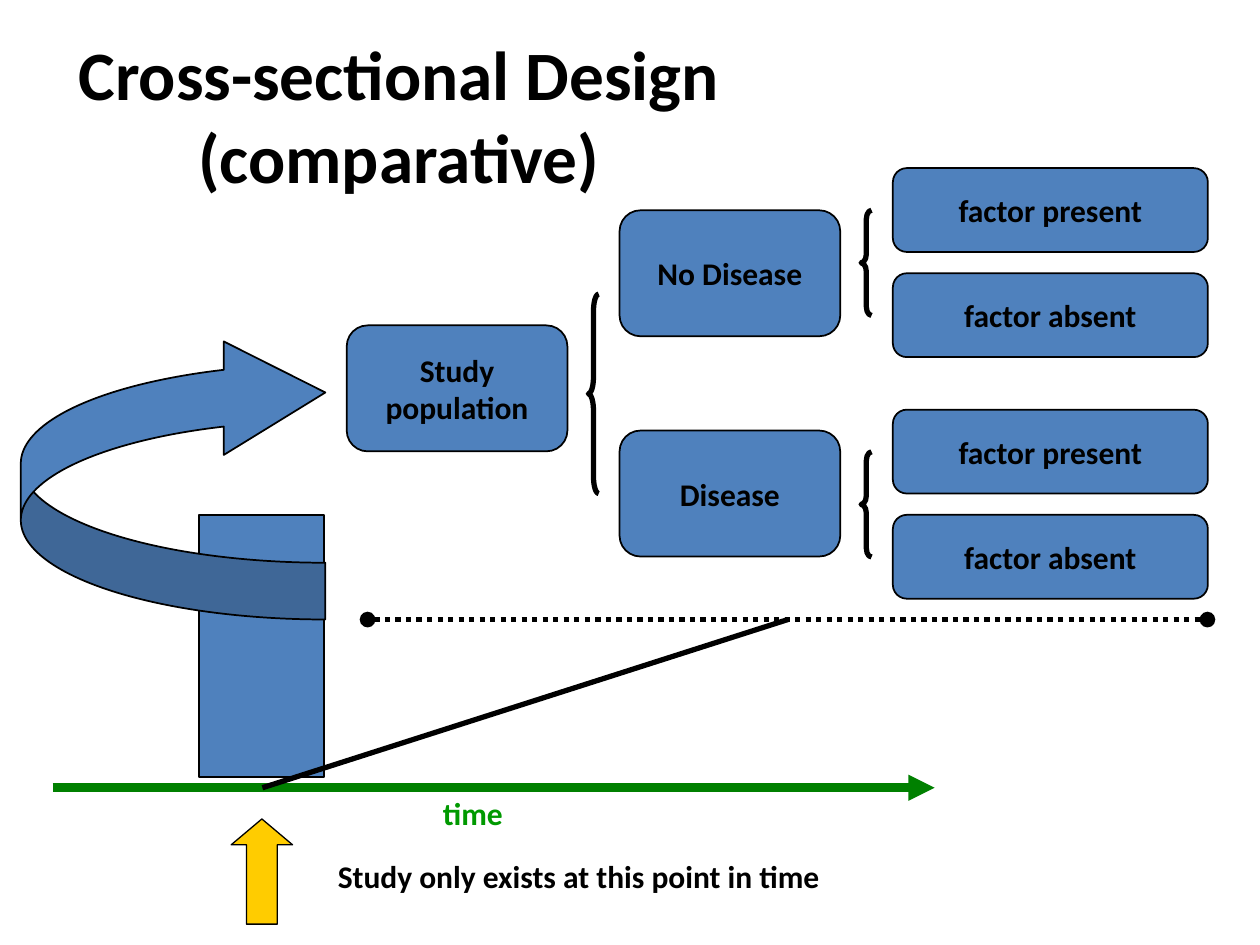
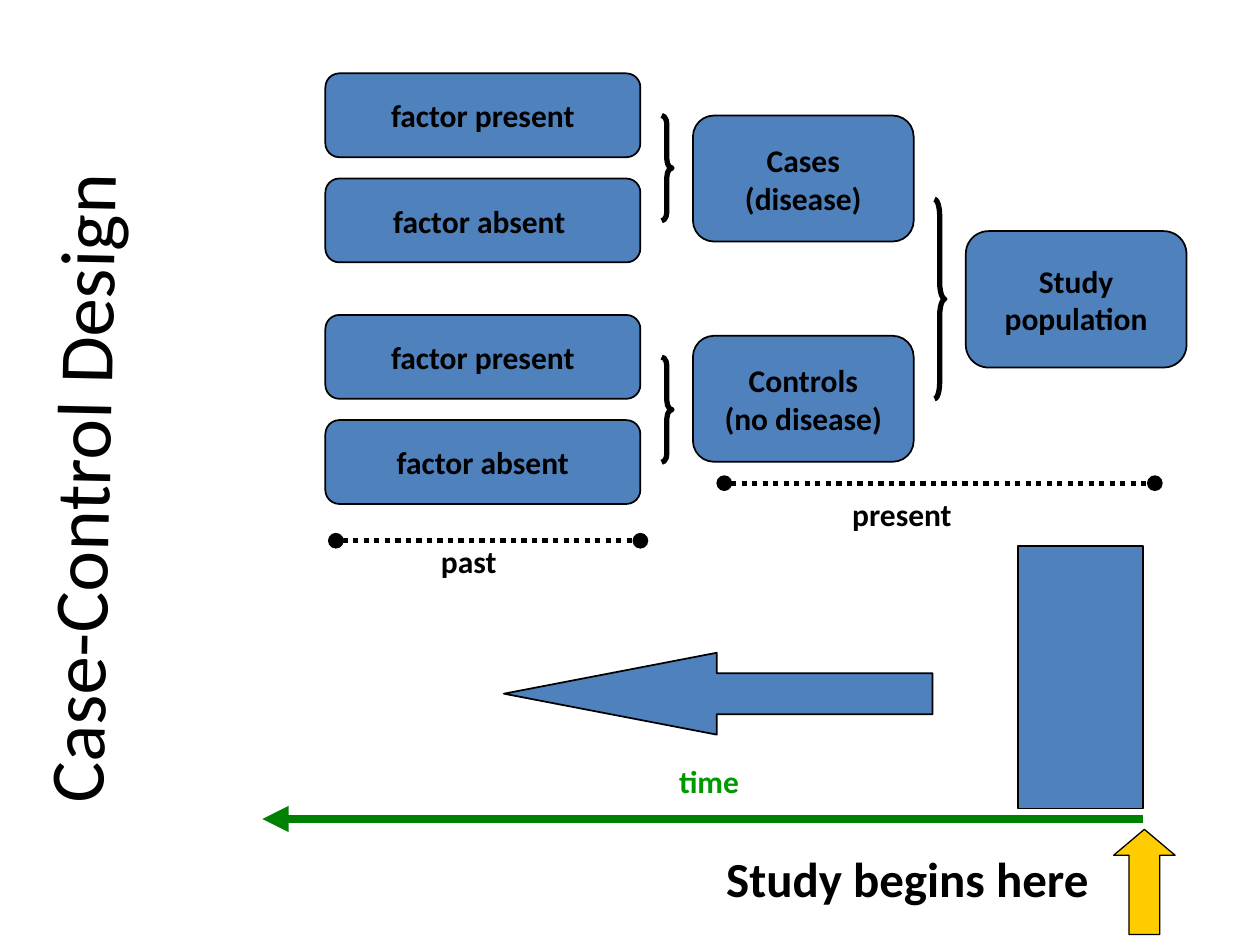
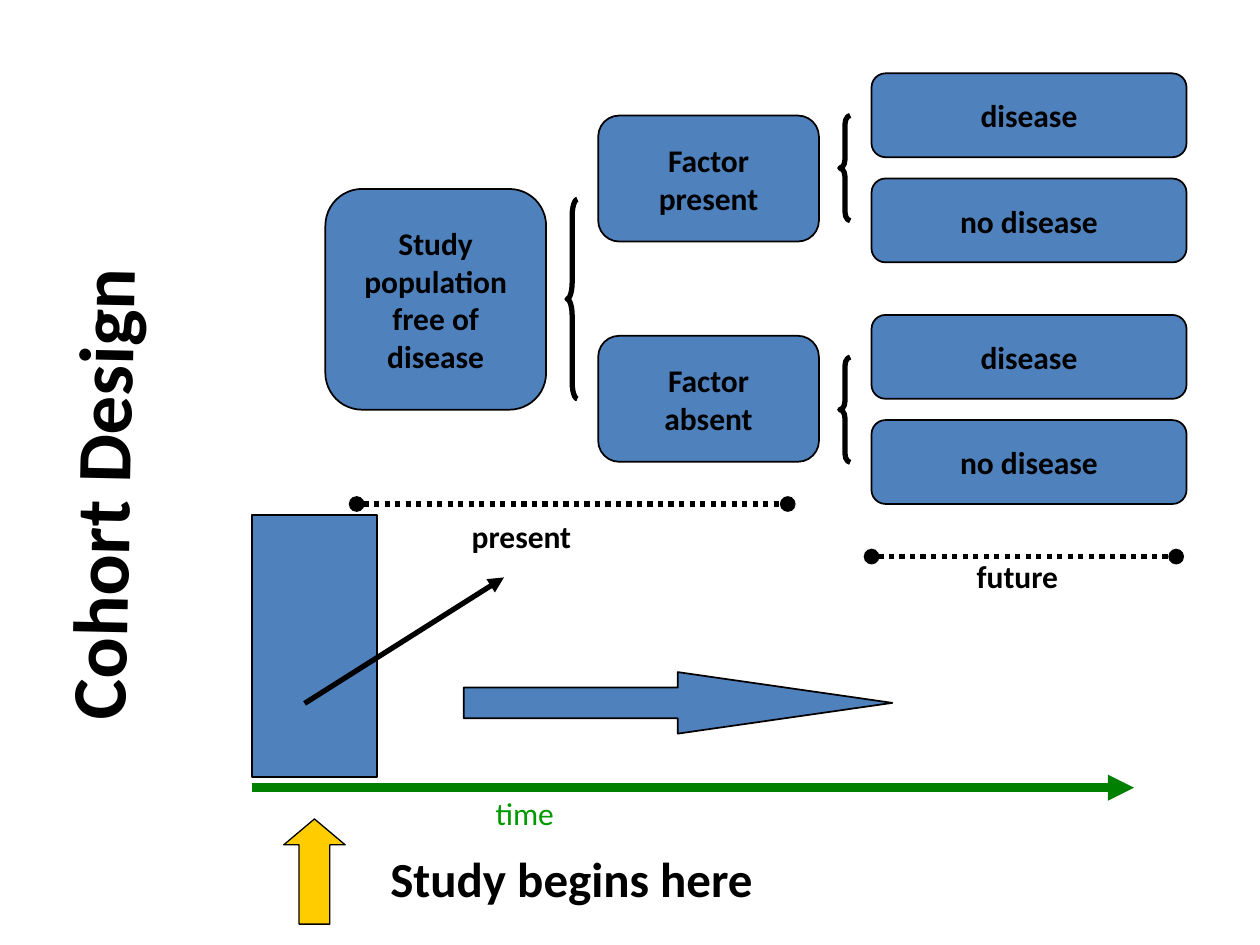
from pptx import Presentation
from pptx import util as u
from pptx.dml.color import RGBColor
from pptx.enum import dml, shapes, text
from pptx.oxml.ns import qn
from lxml import etree

FONT = "Calibri"
COLORS = {
    "box": "4F81BD",
    "ink": "000000",
    "axis": "008000",
    "time": "009900",
    "marker": "FFCC00",
}
KIND = shapes.MSO_SHAPE

# Content; all lengths are in centimetres
DESIGNS = [
    {
        "title": {"text": "Cross-sectional Design (comparative)", "size": 39.6, "bold": True,
                  "box": (0.21, 0.85, 15.66, 2.92), "rotation": 0},
        "time": {"axis": (1.06, 18.84, 15.88), "bar": 4.02, "marker": (4.66, 16.51),
                 "label": (8.68, 15.88, 2.1, 1.27), "bold": True},
        "note": ("Study only exists at this point in time", 18, (6.56, 17.15, 13.84, 1.27)),
        "arrow": {"kind": KIND.CURVED_RIGHT_ARROW, "box": (0.42, 6.77, 6.14, 5.72),
                  "adjust": (0.2, 0.4, 0.358), "flip": "flipV"},
        "tree": {"left": 6.99, "top": 3.39, "mirrored": False,
                 "root": (["Study", "population"], 6.56, 2.54),
                 "branches": [["No Disease"], ["Disease"]],
                 "leaves": ["factor present", "factor absent"] * 2},
        "spans": [((7.41, 24.34, 12.49), None, None)],
        "pointer": ((5.29, 15.88), (15.88, 12.49), None),
    },
    {
        "title": {"text": "Case-Control Design", "size": 44, "bold": False,
                  "box": (-5.29, 8.68, 13.76, 2.33), "rotation": 271.1},
        "time": {"axis": (23.05, 5.29, 16.51), "bar": 20.53, "marker": (22.45, 16.72),
                 "label": (13.44, 15.24, 2.1, 1.27), "bold": True},
        "note": ("Study begins here", 28, (14.39, 16.99, 8.03, 1.45)),
        "arrow": {"kind": KIND.RIGHT_ARROW, "box": (10.16, 13.16, 8.64, 1.65),
                  "adjust": (0.5, 2.6), "flip": "flipH"},
        "tree": {"left": 6.56, "top": 1.48, "mirrored": True,
                 "root": (["Study", "population"], 4.66, 2.75),
                 "branches": [["Cases", "(disease)"], ["Controls", "(no disease)"]],
                 "leaves": ["factor present", "factor absent ", "factor present", "factor absent"]},
        "spans": [((14.6, 23.28, 9.74), "present", (16.93, 9.86, 3.2, 1.27)),
                  ((6.77, 12.91, 10.9), "past", (8.64, 10.8, 2.03, 1.27))],
        "pointer": None,
    },
    {
        "title": {"text": "Cohort Design", "size": 44, "bold": True,
                  "box": (-3.92, 8.79, 11.85, 2.33), "rotation": 271.1},
        "time": {"axis": (5.08, 22.86, 15.88), "bar": 5.08, "marker": (5.72, 16.51),
                 "label": (9.74, 15.88, 2.01, 1.27), "bold": False},
        "note": ("Study begins here", 28, (7.62, 16.99, 8.03, 1.45)),
        "arrow": {"kind": KIND.RIGHT_ARROW, "box": (9.35, 13.55, 8.64, 1.24),
                  "adjust": (0.5, 3.488), "flip": None},
        "tree": {"left": 6.56, "top": 1.48, "mirrored": False,
                 "root": (["Study", "population", "free of", "disease"], 3.81, 4.45),
                 "branches": [["Factor", "present"], ["Factor", "absent"]],
                 "leaves": ["disease", "no disease"] * 2},
        "spans": [((7.19, 15.88, 10.16), "present", (9.26, 10.29, 3.2, 1.27)),
                  ((17.57, 23.71, 11.22), "future", (19.44, 11.11, 2.77, 1.27))],
        "pointer": ((6.14, 14.18), (10.16, 11.64), "triangle"),
    },
]

# Tree layout: columns as (offset, width), rows as offsets from the top
TREE_WIDTH = 17.36
ROOT, ROOT_BRACE, BRANCH, LEAF_BRACE, LEAF = (
    (0, 4.45), (4.87, 0.21), (5.5, 4.45), (10.37, 0.21), (11.01, 6.35))
ROOT_BRACE_ROW, ROOT_BRACE_HEIGHT = 2.54, 4.02
BRANCH_ROWS, BRANCH_HEIGHT = (0.85, 5.29), 2.54
LEAF_BRACE_ROWS, LEAF_BRACE_HEIGHT = (0.85, 5.72), 2.12
LEAF_ROWS, LEAF_HEIGHT = (0, 2.12, 4.87, 6.99), 1.69
BAR_WIDTH, BAR_HEIGHT, BAR_RISE = 2.52, 5.29, 5.5
MARKER_SIZE = (1.24, 2.12)


def color(name):
    return RGBColor.from_string(COLORS[name])


def lengths(values):
    return [u.Cm(value) for value in values]


def write(frame, lines, size, bold=True, ink="ink", align=None):
    for index, line in enumerate(lines):
        paragraph = frame.paragraphs[0] if index == 0 else frame.add_paragraph()
        paragraph.alignment = align
        run = paragraph.add_run()
        run.text = line
        font = run.font
        font.name, font.size, font.bold = FONT, u.Pt(size), bold
        font.color.rgb = color(ink)


def add_title(slide, title):
    shape = slide.shapes.title
    shape.left, shape.top, shape.width, shape.height = lengths(title["box"])
    shape.rotation = title["rotation"]
    frame = shape.text_frame
    frame.auto_size = text.MSO_AUTO_SIZE.NONE
    frame.vertical_anchor = text.MSO_ANCHOR.MIDDLE
    write(frame, [title["text"]], title["size"], title["bold"], align=text.PP_ALIGN.CENTER)


def add_label(slide, words, box, size=18, bold=True, ink="ink"):
    frame = slide.shapes.add_textbox(*lengths(box)).text_frame
    frame.word_wrap = False
    frame.auto_size = text.MSO_AUTO_SIZE.SHAPE_TO_FIT_TEXT
    write(frame, [words], size, bold, ink)


def add_figure(slide, kind, box, fill="box", weight=1, adjust=(), flip=None):
    shape = slide.shapes.add_shape(kind, *lengths(box))
    shape.shadow.inherit = False
    if fill:
        shape.fill.solid()
        shape.fill.fore_color.rgb = color(fill)
    else:
        shape.fill.background()
    shape.line.color.rgb = color("ink")
    shape.line.width = u.Pt(weight)
    for index, value in enumerate(adjust):
        shape.adjustments[index] = value
    if flip:
        shape.element.spPr.find(qn("a:xfrm")).set(flip, "1")
    return shape


def add_box(slide, lines, box):
    frame = add_figure(slide, KIND.ROUNDED_RECTANGLE, box).text_frame
    frame.word_wrap = False
    frame.vertical_anchor = text.MSO_ANCHOR.MIDDLE
    write(frame, lines, 18, align=text.PP_ALIGN.CENTER)


def add_line(slide, start, end, ink="ink", weight=3, dotted=False, head=None, tail=None):
    connector = slide.shapes.add_connector(
        shapes.MSO_CONNECTOR.STRAIGHT, *lengths(start + end))
    connector.line.color.rgb = color(ink)
    connector.line.width = u.Pt(weight)
    if dotted:
        connector.line.dash_style = dml.MSO_LINE.ROUND_DOT
    properties = connector.element.spPr
    outline = properties.find(qn("a:ln"))
    for tag, style in (("a:headEnd", head), ("a:tailEnd", tail)):
        if style:
            etree.SubElement(outline, qn(tag)).set("type", style)
    etree.SubElement(properties, qn("a:effectLst"))


def add_time(slide, time):
    start, end, level = time["axis"]
    add_figure(slide, KIND.RECTANGLE, (time["bar"], level - BAR_RISE, BAR_WIDTH, BAR_HEIGHT))
    add_line(slide, (start, level), (end, level), "axis", 5, tail="triangle")
    add_label(slide, "time", time["label"], bold=time["bold"], ink="time")
    add_figure(slide, KIND.UP_ARROW, time["marker"] + MARKER_SIZE, "marker", 0.75, (0.5, 0.421))


def add_tree(slide, tree):
    mirrored, top = tree["mirrored"], tree["top"]

    def place(column, row, height):
        offset, width = column
        if mirrored:
            offset = TREE_WIDTH - offset - width
        return tree["left"] + offset, top + row, width, height

    # Boxes
    lines, root_top, root_height = tree["root"]
    add_box(slide, lines, place(ROOT, root_top - top, root_height))
    for lines, row in zip(tree["branches"], BRANCH_ROWS):
        add_box(slide, lines, place(BRANCH, row, BRANCH_HEIGHT))
    for words, row in zip(tree["leaves"], LEAF_ROWS):
        add_box(slide, [words], place(LEAF, row, LEAF_HEIGHT))

    # Braces, with curls of constant size
    braces = [(ROOT_BRACE, ROOT_BRACE_ROW, ROOT_BRACE_HEIGHT)]
    braces += [(LEAF_BRACE, row, LEAF_BRACE_HEIGHT) for row in LEAF_BRACE_ROWS]
    for column, row, height in braces:
        curl = height / column[1] / 12
        add_figure(slide, KIND.LEFT_BRACE, place(column, row, height), None, 3,
                   (curl, 0.5), "flipH" if mirrored else None)


def add_design(presentation, design):
    slide = presentation.slides.add_slide(presentation.slide_layouts[5])
    add_title(slide, design["title"])
    add_time(slide, design["time"])
    words, size, box = design["note"]
    add_label(slide, words, box, size)
    add_figure(slide, **design["arrow"])
    add_tree(slide, design["tree"])

    # Dotted spans and pointer
    for (start, end, level), words, box in design["spans"]:
        add_line(slide, (start, level), (end, level), dotted=True, head="oval", tail="oval")
        if words:
            add_label(slide, words, box)
    if design["pointer"]:
        start, end, tail = design["pointer"]
        add_line(slide, start, end, tail=tail)


def main():
    presentation = Presentation()
    presentation.slide_width, presentation.slide_height = u.Cm(25.4), u.Cm(19.05)
    for design in DESIGNS:
        add_design(presentation, design)
    presentation.save("out.pptx")


if __name__ == "__main__":
    main()
